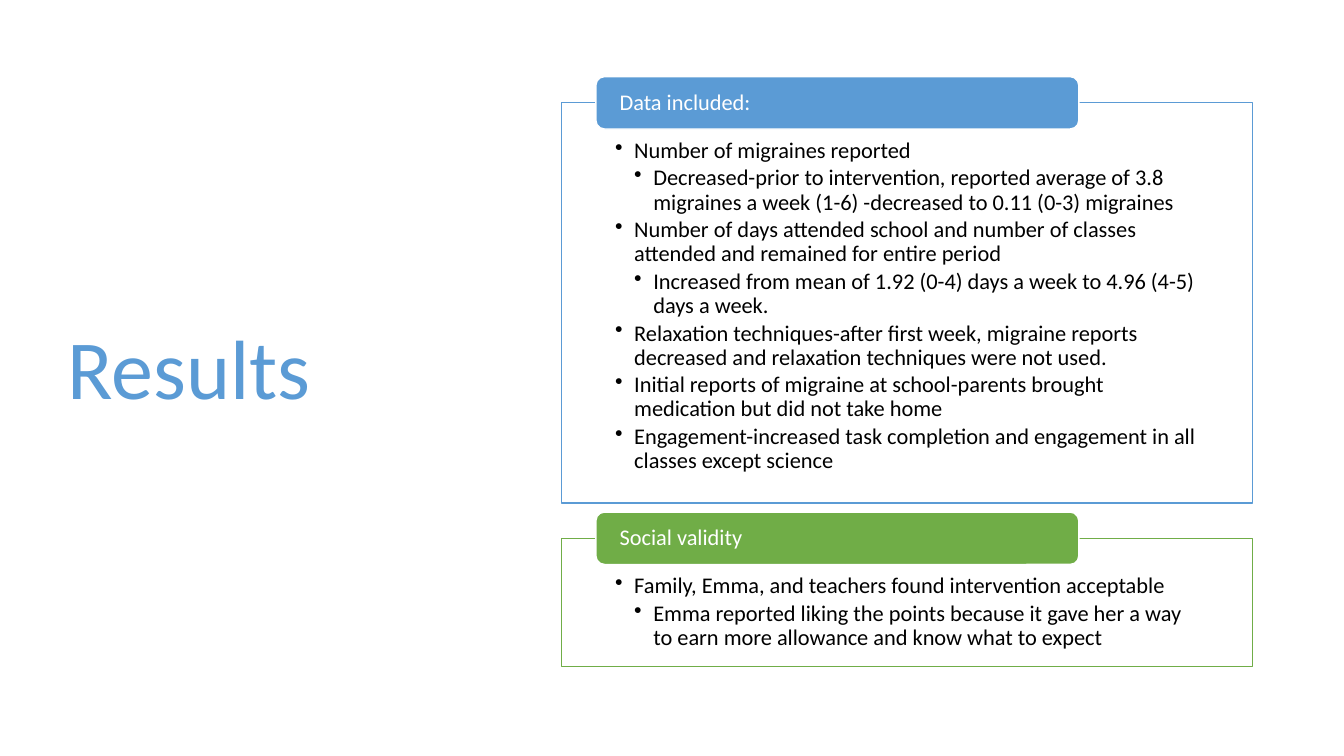
from lxml import etree
from pptx import Presentation
from pptx.dml.color import RGBColor
from pptx.enum.shapes import MSO_SHAPE as Preset
from pptx.enum.text import MSO_ANCHOR as Anchor, PP_ALIGN as Align
from pptx.oxml.ns import qn
from pptx.util import Inches, Pt

COLORS = {"blue": "5B9BD5", "green": "70AD47", "white": "FFFFFF", "black": "000000"}
INDENT = 0.19

# Each section: header, colour, box top, box height, bullets as (level, text)
SECTIONS = [
    ("Data included:", "blue", 1.02, 3.97, [
        (1, "Number of migraines reported"),
        (2, "Decreased-prior to intervention, reported average of 3.8 migraines a week (1-6) "
            "-decreased to 0.11 (0-3) migraines"),
        (1, "Number of days attended school and number of classes attended and remained "
            "for entire period"),
        (2, "Increased from mean of 1.92 (0-4) days a week to 4.96 (4-5) days a week."),
        (1, "Relaxation techniques-after first week, migraine reports decreased and "
            "relaxation techniques were not used."),
        (1, "Initial reports of migraine at school-parents brought medication but did not "
            "take home"),
        (1, "Engagement-increased task completion and engagement in all classes except science"),
    ]),
    ("Social validity", "green", 5.34, 1.27, [
        (1, "Family, Emma, and teachers found intervention acceptable"),
        (2, "Emma reported liking the points because it gave her a way to earn more "
            "allowance and know what to expect"),
    ]),
]


def add_panel(preset, left, top, width, height, fill, line, margins, anchor):
    shape = slide.shapes.add_shape(
        preset, Inches(left), Inches(top), Inches(width), Inches(height))
    shape.shadow.inherit = False
    shape.fill.solid()
    shape.fill.fore_color.rgb = RGBColor.from_string(COLORS[fill])
    shape.line.color.rgb = RGBColor.from_string(COLORS[line])
    shape.line.width = Pt(1)
    frame = shape.text_frame
    frame.word_wrap = True
    frame.vertical_anchor = anchor
    frame.margin_left = frame.margin_right = Inches(margins[0])
    frame.margin_top, frame.margin_bottom = Inches(margins[1]), Inches(margins[2])
    return shape


def write(paragraph, text, size, color):
    paragraph.text = text
    paragraph.alignment = Align.LEFT
    paragraph.line_spacing = 0.9
    font = paragraph.runs[0].font
    font.name = "Calibri"
    font.size = Pt(size)
    font.color.rgb = RGBColor.from_string(COLORS[color])


presentation = Presentation()
presentation.slide_width = Inches(13.33)
presentation.slide_height = Inches(7.5)
slide = presentation.slides.add_slide(presentation.slide_layouts[6])

# Title
title = slide.shapes.add_textbox(Inches(0.57), Inches(0.68), Inches(4.16), Inches(6.02))
title.text_frame.word_wrap = True
title.text_frame.vertical_anchor = Anchor.MIDDLE
write(title.text_frame.paragraphs[0], "Results", 60, "blue")

for heading, color, top, height, bullets in SECTIONS:
    # Outlined box with bullets
    box = add_panel(Preset.RECTANGLE, 5.57, top, 6.85, height, "white", color,
                    (0.53, 0.36, 0.12), Anchor.TOP)
    white_fill = box.fill._xPr.find(qn("a:solidFill"))[0]
    etree.SubElement(white_fill, qn("a:alpha"), val="90000")
    for index, (level, text) in enumerate(bullets):
        frame = box.text_frame
        paragraph = frame.add_paragraph() if index else frame.paragraphs[0]
        write(paragraph, text, 16, "black")
        paragraph.level = level
        paragraph.space_after = Pt(2.4)
        properties = paragraph._p.get_or_add_pPr()
        properties.set("marL", str(Inches(INDENT * level)))
        properties.set("indent", str(-Inches(INDENT)))
        etree.SubElement(properties, qn("a:buChar"), char="•")

    # Header tab across the top edge of the box
    tab = add_panel(Preset.ROUNDED_RECTANGLE, 5.91, top - 0.26, 4.79, 0.52, color, "white",
                    (0.21, 0, 0), Anchor.MIDDLE)
    write(tab.text_frame.paragraphs[0], heading, 16, "white")

presentation.save("out.pptx")
